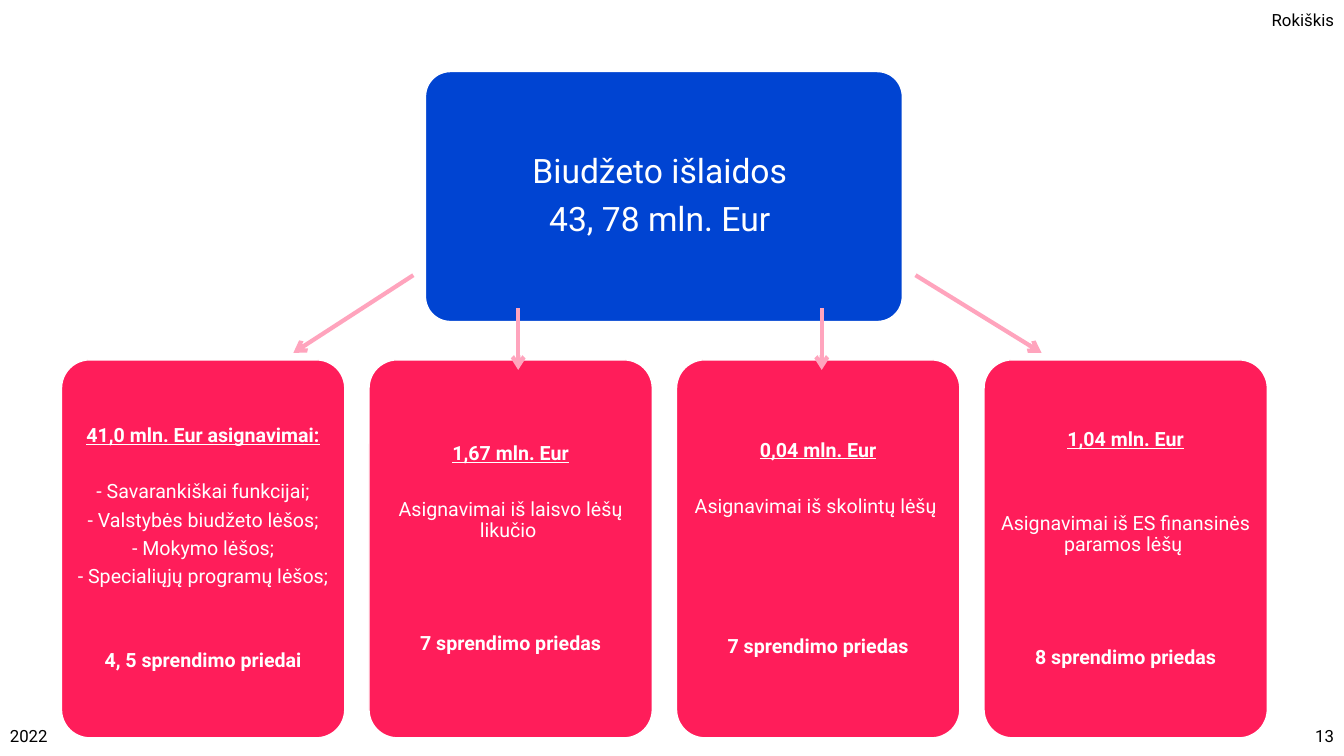
from lxml import etree
from pptx import Presentation
from pptx.dml.color import RGBColor
from pptx.enum import shapes, text
from pptx.oxml import ns
from pptx.util import Inches, Pt

BLUE = RGBColor(0x00, 0x44, 0xD2)
RED = RGBColor(0xFF, 0x1D, 0x5A)
PINK = RGBColor(0xFF, 0xA4, 0xBD)
WHITE = RGBColor(0xFF, 0xFF, 0xFF)
BLACK = RGBColor(0x00, 0x00, 0x00)
FONT = "Roboto"
CENTER, LEFT, RIGHT = text.PP_ALIGN.CENTER, text.PP_ALIGN.LEFT, text.PP_ALIGN.RIGHT

presentation = Presentation()
presentation.slide_width = Inches(13.33)
presentation.slide_height = Inches(7.5)
slide = presentation.slides.add_slide(presentation.slide_layouts[6])


def write(frame, lines, size, color, align):
    """Fill a text frame; each line is (words, space before, emphasised, underlined)."""
    frame.word_wrap = True
    frame.text = "\n".join(line[0] for line in lines)
    for paragraph, (words, before, bold, underline) in zip(frame.paragraphs, lines):
        paragraph.alignment = align
        paragraph.space_before = Pt(before)
        font = paragraph.runs[0].font
        font.name, font.size, font.color.rgb = FONT, Pt(size), color
        font.bold, font.underline = bold, underline


def add_box(left, top, width, height, color, margin, lines, size):
    """Add a rounded box with centred white text."""
    shape = slide.shapes.add_shape(
        shapes.MSO_SHAPE.ROUNDED_RECTANGLE,
        Inches(left), Inches(top), Inches(width), Inches(height))
    shape.adjustments[0] = 0.1
    shape.shadow.inherit = False
    shape.fill.solid()
    shape.fill.fore_color.rgb = color
    shape.line.color.rgb = WHITE
    shape.line.width = Pt(1)
    frame = shape.text_frame
    frame.vertical_anchor = text.MSO_ANCHOR.MIDDLE
    frame.margin_left = frame.margin_right = Inches(margin)
    frame.margin_top = frame.margin_bottom = Inches(margin)
    write(frame, lines, size, WHITE, CENTER)
    for paragraph in frame.paragraphs:
        paragraph.line_spacing = 0.9


# Header and footer
for words, left, top, width, height, align in [
    ("Rokiškis", 10.91, 0.05, 2.42, 0.3, RIGHT),
    ("2022", 0, 7.1, 3, 0.4, LEFT),
    ("13", 10.33, 7.1, 3, 0.4, RIGHT),
]:
    label = slide.shapes.add_textbox(Inches(left), Inches(top), Inches(width), Inches(height))
    label.text_frame.vertical_anchor = text.MSO_ANCHOR.MIDDLE
    write(label.text_frame, [(words, 0, False, False)], 12, BLACK, align)

# Total expenditure
total = [("Biudžeto išlaidos ", 0, False, False), ("43, 78 mln. Eur ", 8.4, False, False)]
add_box(4.22, 0.71, 4.73, 2.48, BLUE, 0.1, total, 24)

# Four parts: amount, gap, details, gap, decision annex
LINE_GAP = 5
cards = [
    ("41,0 mln. Eur asignavimai:", 25,
     ["- Savarankiškai funkcijai;", "- Valstybės biudžeto lėšos;",
      "- Mokymo lėšos;", "- Specialiųjų programų lėšos;"],
     45, "4, 5 sprendimo priedai"),
    ("1,67 mln. Eur", 25, ["Asignavimai iš laisvo lėšų likučio "], 65, "7 sprendimo priedas"),
    ("0,04 mln. Eur", 25, ["Asignavimai iš skolintų lėšų "], 85, "7 sprendimo priedas"),
    ("1,04 mln. Eur", 45, ["Asignavimai iš ES finansinės paramos lėšų "], 65,
     "8 sprendimo priedas"),
]
for column, (amount, detail_gap, details, annex_gap, annex) in enumerate(cards):
    lines = [(amount, 0, True, True)]
    for row, detail in enumerate(details):
        lines.append((detail, LINE_GAP if row else detail_gap, False, False))
    lines.append((annex, annex_gap, True, False))
    add_box(0.61 + 3.05 * column, 3.57, 2.81, 3.75, RED, 0.06, lines, 14)

# Arrows from the total to its parts
for x1, y1, x2, y2 in [
    (4.1, 2.73, 2.91, 3.5),
    (9.08, 2.73, 10.33, 3.5),
    (5.14, 3.06, 5.14, 3.67),
    (8.15, 3.06, 8.15, 3.67),
]:
    arrow = slide.shapes.add_connector(
        shapes.MSO_CONNECTOR.STRAIGHT, Inches(x1), Inches(y1), Inches(x2), Inches(y2))
    arrow.line.color.rgb = PINK
    arrow.line.width = Pt(3)
    etree.SubElement(arrow.line._get_or_add_ln(), ns.qn("a:tailEnd"), type="arrow")
    etree.SubElement(arrow._element.spPr, ns.qn("a:effectLst"))

presentation.save("out.pptx")
